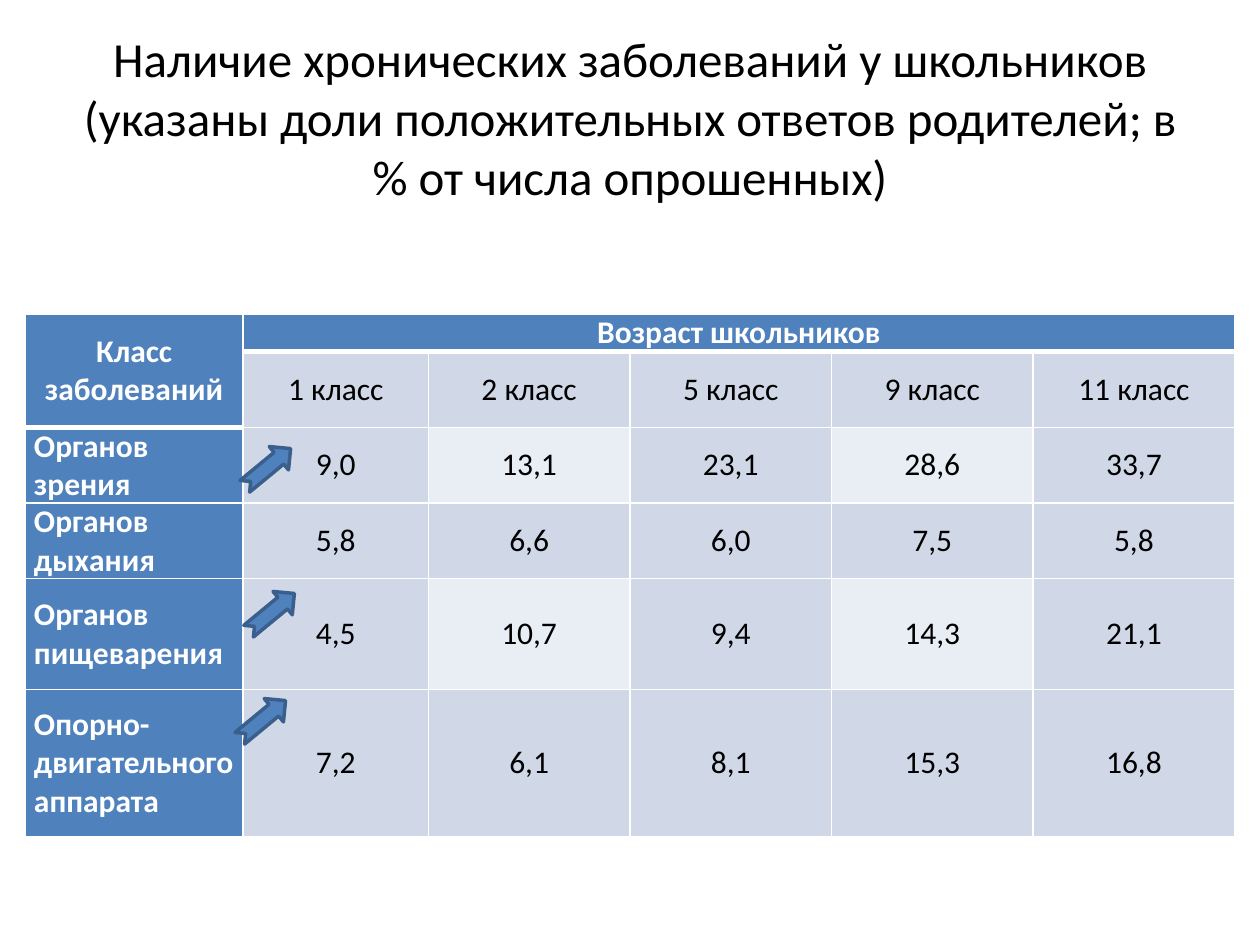
from lxml.etree import SubElement
from pptx import Presentation
from pptx.dml.color import RGBColor
from pptx.enum.shapes import MSO_SHAPE
from pptx.enum.text import MSO_ANCHOR, PP_ALIGN
from pptx.oxml.ns import qn
from pptx.util import Inches, Pt

COLORS = {
    "black": "000000",
    "white": "FFFFFF",
    "blue": "4F81BD",
    "edge": "3A5F8C",
    "band": "D0D8E8",
    "light": "E9EDF4",
}
TITLE = ("Наличие хронических заболеваний у школьников "
         "(указаны доли положительных ответов родителей; в % от числа опрошенных)")
GRADES = ["1 класс", "2 класс", "5 класс", "9 класс", "11 класс"]
DISEASES = {
    "Органов зрения": ["9,0", "13,1", "23,1", "28,6", "33,7"],
    "Органов дыхания": ["5,8", "6,6", "6,0", "7,5", "5,8"],
    "Органов пищеварения": ["4,5", "10,7", "9,4", "14,3", "21,1"],
    "Опорно-двигательного аппарата": ["7,2", "6,1", "8,1", "15,3", "16,8"],
}
ROWS = [["Класс заболеваний", "Возраст школьников", "", "", "", ""], ["", *GRADES]]
ROWS += [[name, *values] for name, values in DISEASES.items()]
COL_WIDTHS = [1.73, 1.47, 1.6, 1.6, 1.6, 1.6]
ROW_HEIGHTS = [0.29, 0.58, 0.58, 0.58, 0.88, 1.17]
ARROWS = [(1.89, 3.59), (1.92, 4.74), (1.85, 5.59)]


def rgb(name):
    return RGBColor.from_string(COLORS[name])


def apply(obj, values):
    for key, value in values.items():
        setattr(obj, key, value)


class SlideBuilder:
    font = "Calibri"

    def __init__(self, prs):
        self.s = prs.slides.add_slide(prs.slide_layouts[6])

    def text(self, tf, text, size, color, align, bold=False):
        p = tf.paragraphs[0]
        p.alignment = align
        r = p.add_run()
        r.text = text
        apply(r.font, {"name": self.font, "size": Pt(size), "bold": bold})
        r.font.color.rgb = rgb(color)

    def title(self, text, x, y, w, h):
        tf = self.s.shapes.add_textbox(Inches(x), Inches(y), Inches(w), Inches(h)).text_frame
        apply(tf, {"word_wrap": True, "vertical_anchor": MSO_ANCHOR.MIDDLE})
        self.text(tf, text, 28, "black", PP_ALIGN.CENTER)

    def borders(self, cell, bottom):
        tcPr = cell._tc.get_or_add_tcPr()
        for index, (side, width) in enumerate({"L": 1, "R": 1, "T": 1, "B": bottom}.items()):
            ln = SubElement(tcPr, qn(f"a:ln{side}"), w=str(Pt(width)))
            fill = SubElement(ln, qn("a:solidFill"))
            SubElement(fill, qn("a:srgbClr"), val=COLORS["white"])
            tcPr.insert(index, ln)

    def cell(self, cell, text, row, col):
        header = row == 0 or col == 0
        light = row > 1 and row % 2 == 0 and col % 2 == 0
        apply(cell, {
            "margin_left": Inches(0.07), "margin_right": Inches(0.07),
            "margin_top": 0, "margin_bottom": 0,
            "vertical_anchor": MSO_ANCHOR.MIDDLE,
        })
        cell.fill.solid()
        cell.fill.fore_color.rgb = rgb("blue" if header else "light" if light else "band")
        self.borders(cell, 3 if row == 0 or (row, col) == (1, 0) else 1)
        if text:
            align = PP_ALIGN.JUSTIFY if col == 0 and row > 1 else PP_ALIGN.CENTER
            self.text(cell.text_frame, text, 18, "white" if header else "black", align, header)

    def table(self, rows, x, y, widths, heights):
        table = self.s.shapes.add_table(
            len(rows), len(widths), Inches(x), Inches(y),
            Inches(sum(widths)), Inches(sum(heights))).table
        for column, width in zip(table.columns, widths):
            column.width = Inches(width)
        for row, height in zip(table.rows, heights):
            row.height = Inches(height)
        table.cell(0, 0).merge(table.cell(1, 0))
        table.cell(0, 1).merge(table.cell(0, len(widths) - 1))
        for i, row in enumerate(rows):
            for j, text in enumerate(row):
                self.cell(table.cell(i, j), text, i, j)

    def arrow(self, x, y):
        sp = self.s.shapes.add_shape(
            MSO_SHAPE.NOTCHED_RIGHT_ARROW, Inches(x), Inches(y), Inches(0.47), Inches(0.24))
        sp.rotation = 320.5
        sp.shadow.inherit = False
        sp.fill.solid()
        sp.fill.fore_color.rgb = rgb("blue")
        sp.line.color.rgb = rgb("edge")
        sp.line.width = Pt(2)


def main():
    prs = Presentation()
    apply(prs, {"slide_width": Inches(10), "slide_height": Inches(7.5)})
    slide = SlideBuilder(prs)
    slide.title(TITLE, 0.5, 0.3, 9, 1.25)
    slide.table(ROWS, 0.2, 2.49, COL_WIDTHS, ROW_HEIGHTS)
    for x, y in ARROWS:
        slide.arrow(x, y)
    prs.save("out.pptx")


if __name__ == "__main__":
    main()
